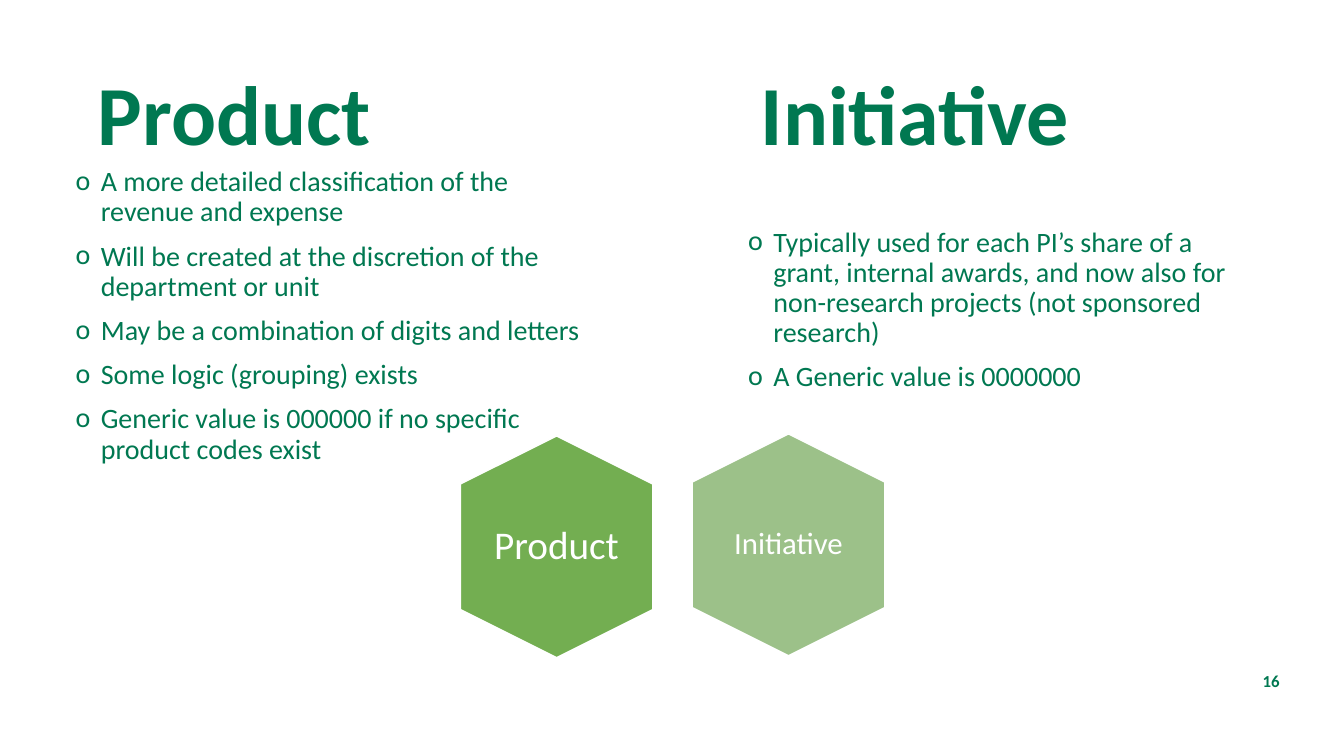
from lxml import etree
from pptx import Presentation
from pptx.dml.color import RGBColor
from pptx.enum.shapes import MSO_SHAPE
from pptx.enum.text import MSO_ANCHOR, MSO_AUTO_SIZE, PP_ALIGN
from pptx.oxml.ns import qn
from pptx.util import Inches, Pt

HEXAGON = MSO_SHAPE.HEXAGON
TOP, MIDDLE = MSO_ANCHOR.TOP, MSO_ANCHOR.MIDDLE
NO_FIT = MSO_AUTO_SIZE.NONE
LEFT, CENTER, RIGHT = PP_ALIGN.LEFT, PP_ALIGN.CENTER, PP_ALIGN.RIGHT

FONT = "Calibri"
DARK = RGBColor(0x00, 0x78, 0x51)
GREEN = RGBColor(0x73, 0xAE, 0x51)
PALE = RGBColor(0x9C, 0xC1, 0x89)
WHITE = RGBColor(0xFF, 0xFF, 0xFF)

HEX_W, HEX_H = 2.2, 1.91
LABEL_W, LABEL_H = 1.32, 1.51

PRODUCT = [
    "A more detailed classification of the revenue and expense",
    "Will be created at the discretion of the department or unit",
    "May be a combination of digits and letters",
    "Some logic (grouping) exists",
    "Generic value is 000000 if no specific product codes exist",
]
INITIATIVE = [
    "Typically used for each PI’s share of a grant, internal awards, and now "
    "also for non-research projects (not sponsored research)",
    "A Generic value is 0000000",
]


def place(shape, left, top, width, height):
    shape.left, shape.top = Inches(left), Inches(top)
    shape.width, shape.height = Inches(width), Inches(height)


def add_box(shapes, left, top, width, height):
    return shapes.add_textbox(
        Inches(left), Inches(top), Inches(width), Inches(height))


def set_frame(shape, anchor=TOP):
    frame = shape.text_frame
    frame.word_wrap = True
    frame.auto_size = NO_FIT
    frame.vertical_anchor = anchor
    return frame


def style(para, size, color, align=LEFT, bold=False, spacing=0.9):
    para.alignment = align
    para.line_spacing = spacing
    font = para.font
    font.name, font.size, font.bold = FONT, Pt(size), bold
    font.color.rgb = color


def add_bullet(para):
    props = para._p.get_or_add_pPr()
    props.set("marL", str(Inches(0.25)))
    props.set("indent", str(Inches(-0.25)))
    etree.SubElement(props, qn("a:buFont"), typeface=FONT)
    etree.SubElement(props, qn("a:buChar"), char="o")


def fill_head(shape, text, left):
    place(shape, left, 0.67, 3.35, 0.94)
    frame = set_frame(shape)
    frame.text = text
    style(frame.paragraphs[0], 60, DARK, CENTER, True)


def fill_list(shape, items, left, top, height):
    place(shape, left, top, 5.28, height)
    frame = set_frame(shape)
    frame.text = "\n".join(items)
    for index, para in enumerate(frame.paragraphs):
        add_bullet(para)
        para.space_before = Pt(10 if index else 0)
        style(para, 20, DARK)


def add_hex(slide, text, left, top, color, size, inset):
    """Group an upright hexagon with its level label."""
    shapes = slide.shapes.add_group_shape().shapes
    tile = shapes.add_shape(
        HEXAGON, Inches(left), Inches(top), Inches(HEX_W), Inches(HEX_H))
    tile.rotation = 90
    tile.adjustments[0] = 0.25
    tile.shadow.inherit = False
    tile.fill.solid()
    tile.fill.fore_color.rgb = color
    tile.line.color.rgb = WHITE
    tile.line.width = Pt(1)

    label = add_box(shapes, left + (HEX_W - LABEL_W) / 2,
                    top + (HEX_H - LABEL_H) / 2, LABEL_W, LABEL_H)
    frame = set_frame(label, MIDDLE)
    frame.margin_left = frame.margin_right = Inches(inset)
    frame.margin_top = frame.margin_bottom = Inches(inset)
    frame.text = text
    style(frame.paragraphs[0], size, WHITE, CENTER)


def add_number(slide, text):
    frame = set_frame(add_box(slide.shapes, 11.86, 6.61, 0.93, 0.29), MIDDLE)
    frame.text = text
    style(frame.paragraphs[0], 12, DARK, RIGHT, True, 1.0)


def main():
    deck = Presentation()
    deck.slide_width, deck.slide_height = Inches(13.33), Inches(7.5)
    slide = deck.slides.add_slide(deck.slide_layouts[3])
    title, left, right = slide.placeholders

    fill_head(title, "Product", 0.65)
    fill_list(left, PRODUCT, 0.65, 1.61, 3.1)
    fill_head(add_box(slide.shapes, 7.4, 0.67, 3.35, 0.94), "Initiative", 7.4)
    fill_list(right, INITIATIVE, 7.32, 2.21, 1.88)
    add_hex(slide, "Product", 4.42, 4.47, GREEN, 28, 0)
    add_hex(slide, "Initiative", 6.72, 4.45, PALE, 22, 0.09)
    add_number(slide, "16")
    deck.save("out.pptx")


if __name__ == "__main__":
    main()
